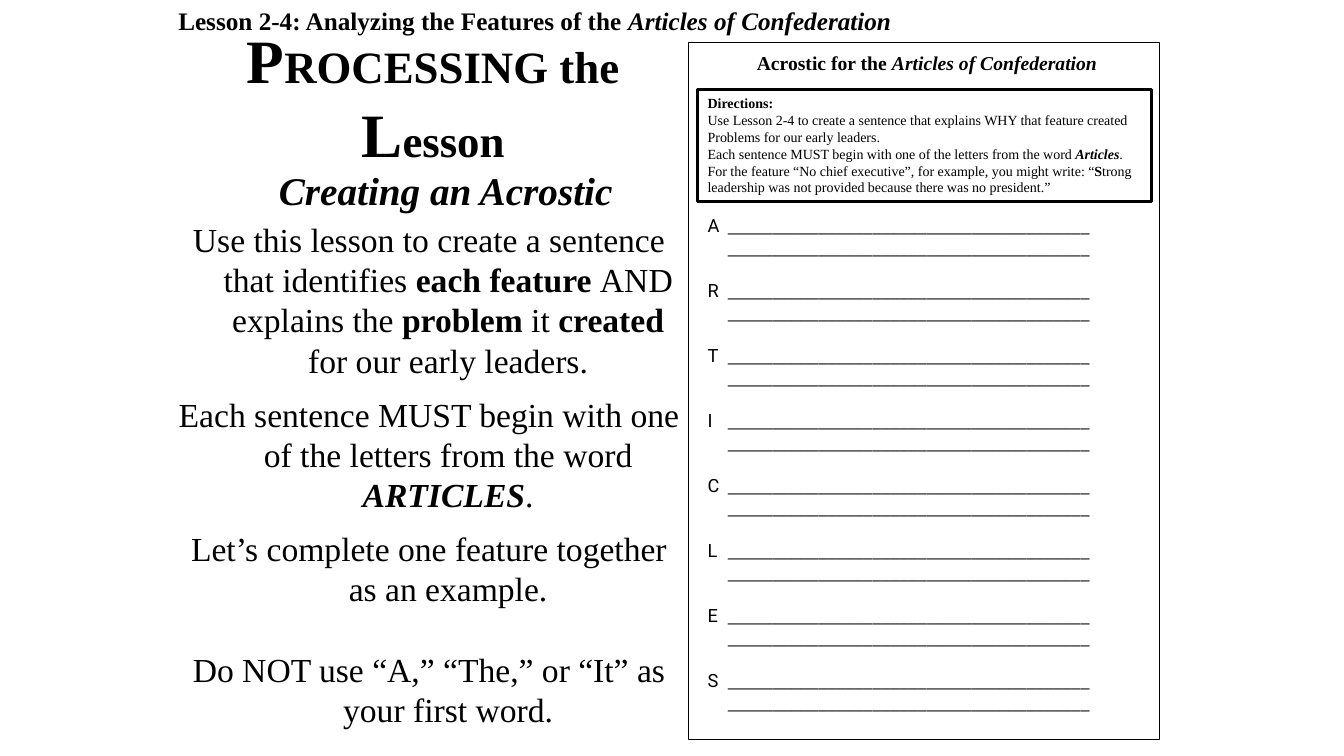
import pptx
import pptx.util
import pptx.dml.color
import pptx.enum.shapes
import pptx.enum.text
import pptx.oxml
from pptx.oxml.ns import nsdecls

BLACK = pptx.dml.color.RGBColor(0, 0, 0)
WHITE = pptx.dml.color.RGBColor(255, 255, 255)
SERIF, LETTER_FONT, RULE_FONT = "Times New Roman", "Roboto", "Calibri"
CENTER = pptx.enum.text.PP_ALIGN.CENTER
LEFT = pptx.enum.text.PP_ALIGN.LEFT
BOLD = {"bold": True}
ITALIC = {"bold": True, "italic": True}
BIG = {"bold": True, "size": pptx.util.Pt(44)}

# Each paragraph is (space before in points, runs); each run is (text, format).
LESSON = [(0, [("Lesson 2-4: Analyzing the Features of the ", BOLD),
               ("Articles of Confederation", ITALIC)])]
TITLE = [(0, [("P", BIG), ("ROCESSING the ", BOLD), ("L", BIG), ("esson", BOLD)])]
SUBTITLE = [(0, [("Creating an Acrostic", ITALIC)])]
TASKS = [
    (0, [("Use this lesson to create a sentence that identifies ", {}),
         ("each feature ", BOLD), ("AND explains the ", {}), ("problem ", BOLD),
         ("it ", {}), ("created ", BOLD), ("for our early leaders.", {})]),
    (9.6, [("Each sentence MUST begin with one of the letters from the word ", {}),
           ("ARTICLES", ITALIC), (".", {})]),
    (9.6, [("Let’s complete one feature together as an example.", {})]),
    (28.7, [("Do NOT use “A,” “The,” or “It” as your first word.", {})]),
]
SHEET_TITLE = [(0, [("Acrostic for the ", BOLD), ("Articles of Confederation", ITALIC)])]
DIRECTIONS = [
    (0, [("Directions:", BOLD)]),
    (0, [("Use Lesson 2-4 to create a sentence that explains WHY that feature created", {})]),
    (0, [("Problems for our early leaders.", {})]),
    (0, [("Each sentence MUST begin with one of the letters from the word ", {}),
         ("Articles", ITALIC), (".", {})]),
    (0, [("For the feature “No chief executive”, for example, you might write: “", {}),
         ("S", BOLD), ("trong", {})]),
    (0, [("leadership was not provided because there was no president.”", {})]),
]
WORD = "ARTICLES"
RULE = "_" * 40
LETTER_GAP = 15.2
HANG = 0.38
RULE_TAB = 0.2

SHEET = (6.83, 0.42, 4.67, 6.92)
DIRECTIONS_BOX = (6.92, 0.89, 4.5, 1.11)


def acrostic():
    """Give two ruled lines for each letter of the word."""
    paragraphs = []
    for i, letter in enumerate(WORD):
        rule = ("\t" + RULE, {"name": RULE_FONT})
        paragraphs.append((LETTER_GAP if i else 0, [(letter, {"name": LETTER_FONT}), rule]))
        paragraphs.append((0, [rule]))
    return paragraphs


def inches(box):
    return [pptx.util.Inches(v) for v in box]


def add_frame(s, box, width, fill=None):
    sp = s.shapes.add_shape(pptx.enum.shapes.MSO_SHAPE.RECTANGLE, *inches(box))
    sp.shadow.inherit = False
    if fill is None:
        sp.fill.background()
    else:
        sp.fill.solid()
        sp.fill.fore_color.rgb = fill
    sp.line.color.rgb = BLACK
    sp.line.width = pptx.util.Pt(width)


def add_text(s, box, paragraphs, size, align=LEFT, hang=0, tab=0, wrap=True):
    tf = s.shapes.add_textbox(*inches(box)).text_frame
    tf.word_wrap = wrap
    for i, (before, runs) in enumerate(paragraphs):
        p = tf.paragraphs[0] if i == 0 else tf.add_paragraph()
        pPr = p._p.get_or_add_pPr()
        if hang:
            pPr.set("marL", str(pptx.util.Inches(hang)))
            pPr.set("indent", str(-pptx.util.Inches(hang)))
        if tab:
            pPr.append(pptx.oxml.parse_xml(
                f'<a:tabLst {nsdecls("a")}><a:tab pos="{pptx.util.Inches(tab)}" algn="l"/></a:tabLst>'))
        p.alignment = align
        if before:
            p.space_before = pptx.util.Pt(before)
        for text, style in runs:
            r = p.add_run()
            r.text = text
            base = {"name": SERIF, "size": pptx.util.Pt(size)}
            for key, value in (base | style).items():
                setattr(r.font, key, value)
            r.font.color.rgb = BLACK


def main():
    prs = pptx.Presentation()
    prs.slide_width, prs.slide_height = inches((13.33, 7.5))
    s = prs.slides.add_slide(prs.slide_layouts[6])

    add_text(s, (1.67, 0.17, 5.25, 1.58), TITLE, 32, CENTER)
    add_text(s, (1.67, 0, 7.34, 0.4), LESSON, 18, wrap=False)
    add_text(s, (2.42, 1.6, 4, 0.57), SUBTITLE, 28, CENTER)
    add_text(s, (1.67, 2.12, 5.17, 5.22), TASKS, 24, CENTER, hang=HANG)

    add_frame(s, SHEET, 0.75, WHITE)
    add_text(s, (7.08, 0.46, 4.23, 0.33), SHEET_TITLE, 14, CENTER)
    add_text(s, DIRECTIONS_BOX, DIRECTIONS, 10, hang=HANG)
    add_frame(s, DIRECTIONS_BOX, 2.25)
    add_text(s, (6.92, 2.08, 4.58, 5.13), acrostic(), 13, tab=RULE_TAB)

    prs.save("out.pptx")


if __name__ == "__main__":
    main()
